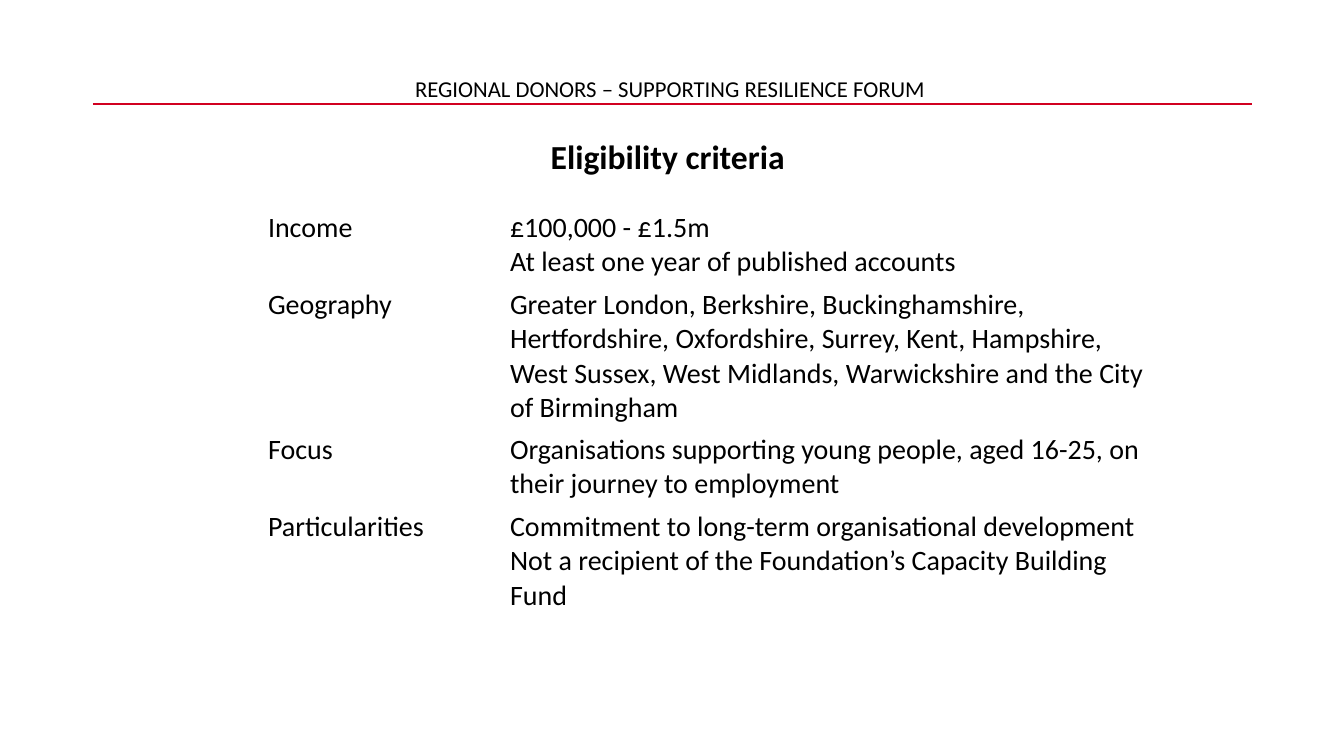
from lxml import etree
from pptx import Presentation
from pptx.dml.color import RGBColor
from pptx.enum.shapes import MSO_CONNECTOR
from pptx.enum.text import PP_ALIGN
from pptx.oxml.ns import qn
from pptx.util import Cm, Pt

STRAIGHT = MSO_CONNECTOR.STRAIGHT
LEFT = PP_ALIGN.LEFT
CENTER = PP_ALIGN.CENTER

FONT = "Calibri"
BLACK = "000000"
RED = "D10020"

MARGIN = 2.34
CONTENT_WIDTH = 29.21
COLUMN_WIDTHS = (6.1, 16.48)
CRITERIA = [
    (1.9, "Income", "£100,000 - £1.5m\nAt least one year of published accounts"),
    (2.72, "Geography",
     "Greater London, Berkshire, Buckinghamshire, Hertfordshire, Oxfordshire, "
     "Surrey, Kent, Hampshire, West Sussex, West Midlands, Warwickshire and "
     "the City of Birmingham"),
    (1.9, "Focus",
     "Organisations supporting young people, aged 16-25, on their journey "
     "to employment"),
    (1.9, "Particularities",
     "Commitment to long-term organisational development\n"
     "Not a recipient of the Foundation’s Capacity Building Fund"),
    (1.47, "", ""),
    (1.47, "", ""),
]


def color(hex_value):
    """Return the colour for a hex string."""
    return RGBColor.from_string(hex_value)


def write(frame, text, size, align=LEFT, bold=False):
    """Fill a text frame and format its runs."""
    frame.text = text
    for paragraph in frame.paragraphs:
        paragraph.alignment = align
        for run in paragraph.runs:
            run.font.name = FONT
            run.font.size = Pt(size)
            run.font.bold = bold
            run.font.color.rgb = color(BLACK)


def add_heading(slide, text, left, top, width, height, size, bold=False):
    """Add a centred heading."""
    heading = slide.shapes.add_textbox(Cm(left), Cm(top), Cm(width), Cm(height))
    heading.text_frame.word_wrap = True
    write(heading.text_frame, text, size, CENTER, bold)


def add_rule(slide, left, top, width):
    """Add a thin horizontal rule."""
    rule = slide.shapes.add_connector(
        STRAIGHT, Cm(left), Cm(top), Cm(left + width), Cm(top))
    rule.line.color.rgb = color(RED)
    rule.line.width = Pt(1)
    etree.SubElement(rule._element.spPr, qn("a:effectLst"))


def add_criteria_table(slide, left, top):
    """Add the plain table of criteria."""
    height = sum(row[0] for row in CRITERIA)
    table = slide.shapes.add_table(
        len(CRITERIA), len(COLUMN_WIDTHS), Cm(left), Cm(top),
        Cm(sum(COLUMN_WIDTHS)), Cm(height)).table
    table.first_row = False
    table.horz_banding = False
    for column, width in zip(table.columns, COLUMN_WIDTHS):
        column.width = Cm(width)
    for row, (row_height, *texts) in zip(table.rows, CRITERIA):
        row.height = Cm(row_height)
        for cell, text in zip(row.cells, texts):
            cell.fill.background()
            write(cell.text_frame, text, 20)


def main():
    """Build and save the slide."""
    presentation = Presentation()
    presentation.slide_width = Cm(33.87)
    presentation.slide_height = Cm(19.05)
    slide = presentation.slides.add_slide(presentation.slide_layouts[6])
    add_rule(slide, MARGIN, 2.62, CONTENT_WIDTH)
    add_heading(slide, "REGIONAL DONORS – SUPPORTING RESILIENCE FORUM ",
                MARGIN, 1.75, CONTENT_WIDTH, 0.71, 16.2)
    add_heading(slide, "Eligibility criteria ", 13.46, 3.3, 6.93, 1.27, 24, True)
    add_criteria_table(slide, 6.5, 5.18)
    presentation.save("out.pptx")


if __name__ == "__main__":
    main()
